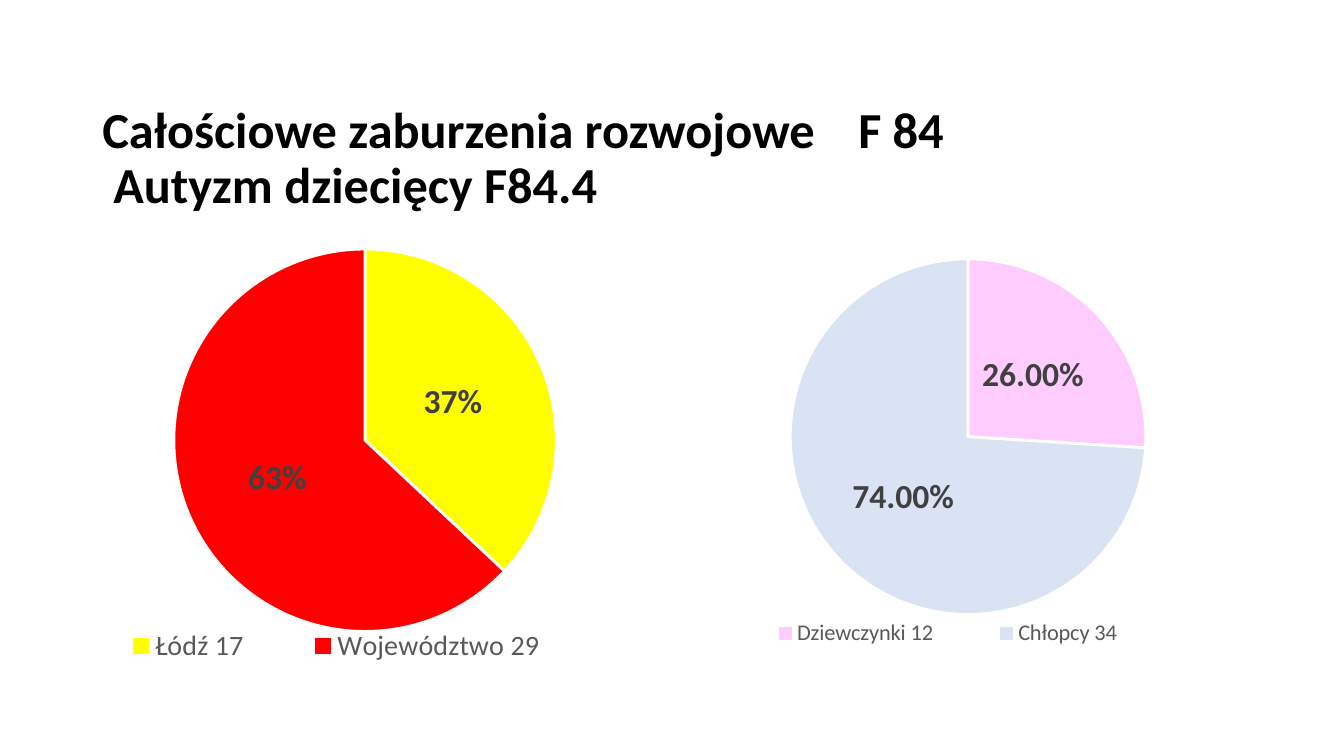
from dataclasses import dataclass

from lxml import etree
from pptx import Presentation
from pptx import util as u
from pptx.chart.data import CategoryChartData
from pptx.dml.color import RGBColor
from pptx.enum import chart as charts, text
from pptx.oxml import ns


@dataclass(frozen=True)
class Theme:
    """Hold the colours and type sizes of the slide."""

    font: str = "Calibri"
    ink: str = "000000"
    label: str = "404040"
    legend: str = "595959"
    edge: str = "FFFFFF"
    yellow: str = "FFFF00"
    red: str = "FF0000"
    pink: str = "FFCCFF"
    pale_blue: str = "DAE3F3"
    title_size: float = 36
    label_size: float = 24
    large_legend: float = 20
    small_legend: float = 16
    base_size: float = 10


class SlideBuilder:
    """Draw styled elements on the current slide."""

    def __init__(self, page, theme):
        """Keep the page and the theme."""
        self.page = page
        self.theme = theme

    def apply(self, target, **values):
        """Set each given value on the target."""
        for name, value in values.items():
            setattr(target, name, value)

    def style(self, font, size, color, bold=False):
        """Format a font."""
        self.apply(font, name=self.theme.font, size=u.Pt(size), bold=bold)
        font.color.rgb = RGBColor.from_string(color)

    def title(self, frame, lines):
        """Add title lines, each with an indent and an optional tab stop."""
        box = self.page.shapes.add_textbox(*map(u.Pt, frame)).text_frame
        self.apply(box, word_wrap=True, margin_top=0, margin_bottom=0,
                   vertical_anchor=text.MSO_ANCHOR.TOP)
        for index, (words, indent, stop) in enumerate(lines):
            para = box.add_paragraph() if index else box.paragraphs[0]
            para.line_spacing = 0.9
            properties = para._p.get_or_add_pPr()
            properties.set("indent", str(u.Pt(indent)))
            if stop:
                tabs = etree.SubElement(properties, ns.qn("a:tabLst"))
                etree.SubElement(tabs, ns.qn("a:tab"), pos=str(u.Pt(stop)), algn="l")
            span = para.add_run()
            span.text = words
            self.style(span.font, self.theme.title_size, self.theme.ink, True)

    def pie(self, frame, slices, number_format, legend_size, legend_area, plot_area=None):
        """Add a pie of (category, value, colour) slices with centred labels."""
        theme = self.theme
        names, values, colors = zip(*slices)
        data = CategoryChartData()
        data.categories = names
        data.add_series("Series 1", values)
        chart = self.page.shapes.add_chart(
            charts.XL_CHART_TYPE.PIE, *map(u.Pt, frame), data).chart
        self.apply(chart, has_title=False, has_legend=True)
        self.style(chart.font, theme.base_size, theme.ink)
        self.apply(chart.legend, position=charts.XL_LEGEND_POSITION.BOTTOM,
                   include_in_layout=False)
        self.style(chart.legend.font, legend_size, theme.legend)
        self.place(chart.legend._element, 1, legend_area)

        plot = chart.plots[0]
        self.apply(plot, vary_by_categories=True, has_data_labels=True)
        self.apply(plot.data_labels, show_value=True, show_percentage=False,
                   number_format=number_format, number_format_is_linked=False,
                   position=charts.XL_LABEL_POSITION.CENTER)
        self.style(plot.data_labels.font, theme.label_size, theme.label, True)
        for index, color in enumerate(colors):
            piece = plot.series[0].points[index].format
            piece.fill.solid()
            piece.fill.fore_color.rgb = RGBColor.from_string(color)
            piece.line.color.rgb = RGBColor.from_string(theme.edge)
            piece.line.width = u.Pt(2)
        if plot_area:
            self.place(chart._chartSpace.chart.plotArea, 0, plot_area, layoutTarget="inner")

    def place(self, part, position, area, **target):
        """Fix a chart part at fractions of the chart."""
        for old in part.findall(ns.qn("c:layout")):
            part.remove(old)
        holder = etree.Element(ns.qn("c:layout"))
        part.insert(position, holder)
        manual = etree.SubElement(holder, ns.qn("c:manualLayout"))
        settings = {**target, "xMode": "edge", "yMode": "edge", **dict(zip("xywh", area))}
        for name, value in settings.items():
            etree.SubElement(manual, ns.qn(f"c:{name}"), val=str(value))


def main():
    """Build and save the slide."""
    theme = Theme()
    deck = Presentation()
    deck.slide_width, deck.slide_height = u.Pt(960), u.Pt(540)
    page = deck.slides.add_slide(deck.slide_layouts[6])
    builder = SlideBuilder(page, theme)
    builder.title((66, 75.3, 828, 80), [
        ("Całościowe zaburzenia rozwojowe\tF 84", 0, 526.5),
        ("Autyzm dziecięcy F84.4", 8, None),
    ])
    builder.pie((18.5, 154, 461.5, 341.5), [
        ("Łódź 17", 0.37, theme.yellow),
        ("Województwo 29", 0.63, theme.red),
    ], "0%", theme.large_legend, (0.07, 0.86, 0.82, 0.08), (0.05, 0.07, 0.95, 0.8))
    builder.pie((451.5, 175, 480, 305), [
        ("Dziewczynki 12", 0.26, theme.pink),
        ("Chłopcy 34", 0.74, theme.pale_blue),
    ], "0.00%", theme.small_legend, (0.13, 0.87, 0.68, 0.08))
    deck.save("out.pptx")


if __name__ == "__main__":
    main()
